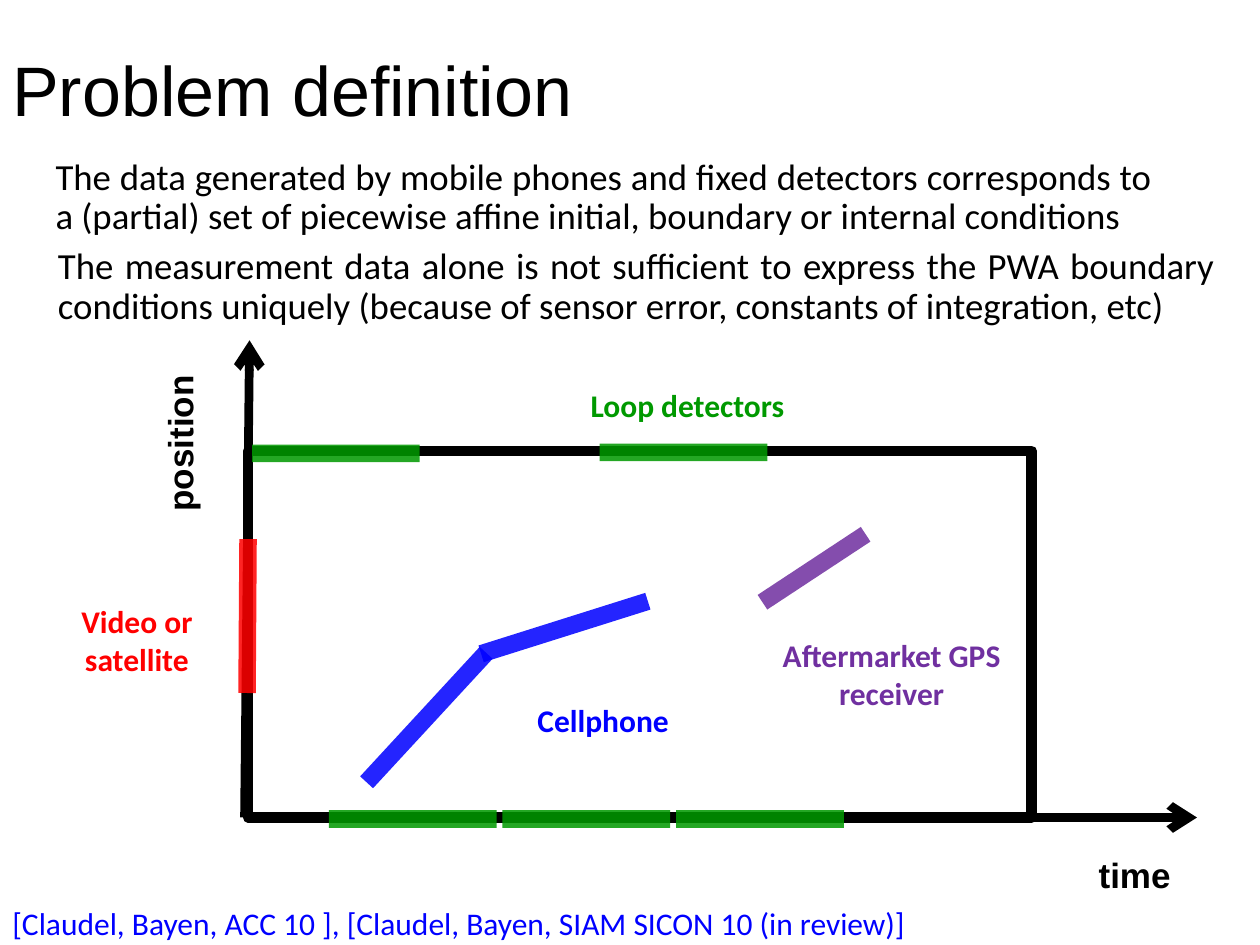
from lxml.etree import SubElement
from pptx import Presentation
from pptx.dml.color import RGBColor
from pptx.enum.shapes import MSO_CONNECTOR as Connector, MSO_SHAPE as Shape
from pptx.enum.text import MSO_ANCHOR as Anchor, PP_ALIGN as Align
from pptx.oxml.ns import qn
from pptx.util import Cm, Pt

BLACK = RGBColor(0x00, 0x00, 0x00)
GREEN = RGBColor(0x00, 0x99, 0x00)
RED = RGBColor(0xFF, 0x00, 0x00)
BLUE = RGBColor(0x00, 0x00, 0xFF)
PURPLE = RGBColor(0x70, 0x30, 0xA0)


def add_text(text, left, top, width, height, size=18, font="Calibri", color=BLACK,
             bold=False, align=Align.CENTER, anchor=Anchor.TOP, wrap=True,
             spacing=1.0, indent=0, rotation=0):
    box = page.shapes.add_textbox(Cm(left), Cm(top), Cm(width), Cm(height))
    box.rotation = rotation
    frame = box.text_frame
    frame.word_wrap = wrap
    frame.vertical_anchor = anchor
    para = frame.paragraphs[0]
    para.alignment = align
    para.line_spacing = spacing
    if indent:
        para._p.get_or_add_pPr().set("marL", str(Cm(indent)))
    span = para.add_run()
    span.text = text
    span.font.name = font
    span.font.size = Pt(size)
    span.font.bold = bold
    span.font.color.rgb = color


def add_line(start_x, start_y, end_x, end_y, color, width, alpha=100, arrow=False):
    line = page.shapes.add_connector(
        Connector.STRAIGHT, Cm(start_x), Cm(start_y), Cm(end_x), Cm(end_y))
    line.line.color.rgb = color
    line.line.width = Pt(width)
    outline = line.line._get_or_add_ln()
    if alpha < 100:
        tint = outline.find(".//" + qn("a:srgbClr"))
        SubElement(tint, qn("a:alpha"), val=str(alpha * 1000))
    if arrow:
        SubElement(outline, qn("a:tailEnd"), type="arrow")
    SubElement(line._element.spPr, qn("a:effectLst"))


deck = Presentation()
deck.slide_width = Cm(25.4)
deck.slide_height = Cm(19.05)
page = deck.slides.add_slide(deck.slide_layouts[6])

add_text("[Claudel, Bayen, ACC 10 ], [Claudel, Bayen, SIAM SICON 10 (in review)]",
         0, 18.19, 19.79, 0.86, color=BLUE, align=Align.LEFT, wrap=False, spacing=0.9)
add_text("time", 21.67, 17.09, 2.41, 1.12, size=20, font="Arial", bold=True)
add_text("position", 1.8, 8.38, 3.66, 1.12, size=20, font="Arial", bold=True, rotation=270)

domain = page.shapes.add_shape(Shape.RECTANGLE, Cm(5), Cm(9.09), Cm(15.8), Cm(7.39))
domain.shadow.inherit = False
domain.fill.background()
domain.line.color.rgb = BLACK
domain.line.width = Pt(6)
SubElement(domain.line._get_or_add_ln(), qn("a:round"))

add_line(4.95, 16.48, 24.13, 16.48, BLACK, 5, arrow=True)
add_line(4.93, 16.48, 5.03, 6.86, BLACK, 5, arrow=True)

detectors = [(5.08, 9.14), (12.09, 9.12)] + [(6.63 + 3.5 * step, 16.51) for step in range(3)]
readings = [(x, y, x + 3.38, y, GREEN) for x, y in detectors] + [
    (5, 10.87, 4.98, 13.97, RED),
    (7.39, 15.77, 9.8, 13.16, BLUE),
    (9.7, 13.18, 13.06, 12.12, BLUE),
    (15.37, 12.14, 17.45, 10.77, PURPLE),
]
for *ends, color in readings:
    add_line(*ends, color, 10, alpha=85)

labels = [
    ("Loop detectors", 11.28, 7.65, 5.16, 1.02, GREEN),
    ("Cellphone", 9.58, 14, 5.16, 1.02, BLUE),
    ("Aftermarket GPS receiver", 15.04, 12.7, 5.87, 1.8, PURPLE),
    ("Video or satellite", 0.84, 12.01, 3.84, 1.8, RED),
]
for text, *place, color in labels:
    add_text(text, *place, color=color, bold=True)

add_text("Problem definition", 0, 0.2, 23.19, 3.18, size=40, font="Arial",
         align=Align.LEFT, anchor=Anchor.MIDDLE)

statements = [
    ("The data generated by mobile phones and fixed detectors corresponds to a (partial) "
     "set of piecewise affine initial, boundary or internal conditions",
     -0.08, 3.07, 23.55),
    ("The measurement data alone is not sufficient to express the PWA boundary conditions "
     "uniquely (because of sensor error, constants of integration, etc)",
     -0.03, 4.88, 24.77),
]
for text, left, top, width in statements:
    add_text(text, left, top, width, 10.46, size=21, align=Align.JUSTIFY,
             spacing=0.9, indent=0.95)

deck.save("out.pptx")
